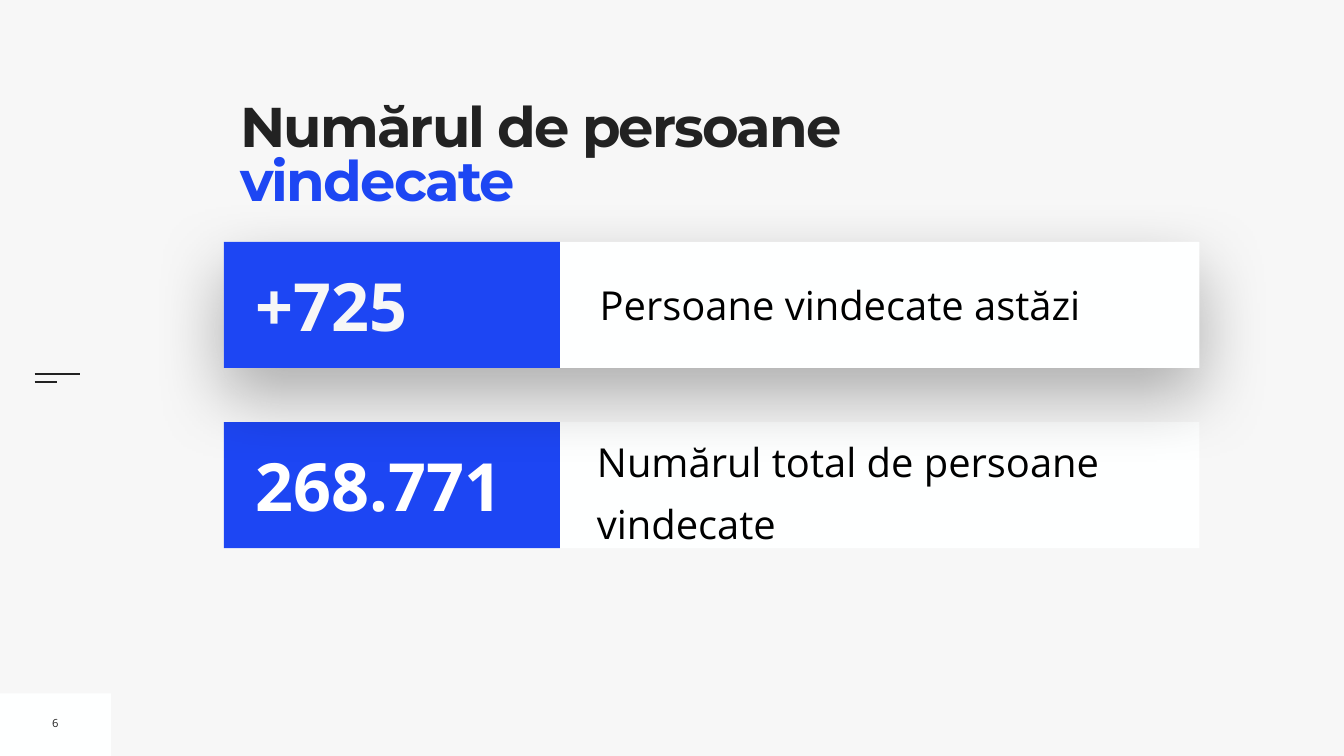
from dataclasses import dataclass

from lxml import etree
from pptx import Presentation
from pptx.dml.color import RGBColor
from pptx.enum.shapes import MSO_CONNECTOR, MSO_SHAPE
from pptx.enum.text import MSO_ANCHOR, MSO_AUTO_SIZE, PP_ALIGN
from pptx.oxml.ns import qn
from pptx.util import Inches, Pt

RECTANGLE = MSO_SHAPE.RECTANGLE
STRAIGHT = MSO_CONNECTOR.STRAIGHT
TOP, MIDDLE = MSO_ANCHOR.TOP, MSO_ANCHOR.MIDDLE
LEFT, CENTER = PP_ALIGN.LEFT, PP_ALIGN.CENTER
NO_AUTOFIT = MSO_AUTO_SIZE.NONE

WIDTH, HEIGHT = Inches(26.67), Inches(15)
GRID = 60  # columns across and rows down the slide
PAPER, WHITE, INK, BLUE, BLACK = "F7F7F7", "FEFFFF", "222222", "1D46F3", "000000"
BODY_FONT, TITLE_FONT = "Open Sans", "Montserrat"

# Card layout, in grid columns and rows
CARD_LEFT, CARD_WIDTH, CARD_HEIGHT = 10, 43.55, 10
NUMBER_WIDTH, NUMBER_INDENT = 15, 1.2


@dataclass
class Card:
    top: float
    number: str
    number_color: str
    label: str
    label_left: float
    label_inset: float = 0.1
    line_spacing: float = 1.0
    space_before: float = 0
    shadow: bool = False


CARDS = [
    Card(33.5, "268.771", "FFFFFF", "Numărul total de persoane vindecate", 26.65,
         label_inset=0, line_spacing=1.3, space_before=20),
    Card(19.2, "+725", PAPER, "Persoane vindecate astăzi", 26.55, shadow=True),
]


def color(value: str) -> RGBColor:
    return RGBColor.from_string(value)


def x(columns: float) -> int:
    return round(WIDTH * columns / GRID)


def y(rows: float) -> int:
    return round(HEIGHT * rows / GRID)


def box(left: float, top: float, width: float, height: float) -> tuple:
    return x(left), y(top), x(width), y(height)


def add_panel(shapes, area: tuple, fill: str):
    shape = shapes.add_shape(RECTANGLE, *area)
    shape.fill.solid()
    shape.fill.fore_color.rgb = color(fill)
    shape.line.fill.background()
    shape.shadow.inherit = False
    return shape


def set_frame(frame, inset: float, anchor, wrap: bool = True) -> None:
    frame.margin_left = frame.margin_right = Inches(inset)
    frame.margin_top = frame.margin_bottom = Inches(inset)
    frame.vertical_anchor, frame.word_wrap = anchor, wrap
    frame.auto_size = NO_AUTOFIT


def add_text(shapes, area: tuple, text: str, size: float, ink: str, bold: bool = False,
             inset: float = 0.1, align=LEFT, wrap: bool = True):
    frame = shapes.add_textbox(*area).text_frame
    set_frame(frame, inset, MIDDLE, wrap)
    paragraph = frame.paragraphs[0]
    paragraph.text, paragraph.alignment = text, align
    font = paragraph.font
    font.name, font.size, font.bold = BODY_FONT, Pt(size), bold
    font.color.rgb = color(ink)
    return paragraph


def add_shadow(shape) -> None:
    effects = shape._element.spPr.find(qn("a:effectLst"))
    shadow = etree.SubElement(effects, qn("a:outerShdw"), blurRad=str(Pt(100)),
                              dist=str(Pt(40)), dir="5400000", rotWithShape="0")
    tint = etree.SubElement(shadow, qn("a:srgbClr"), val=BLACK)
    etree.SubElement(tint, qn("a:alpha"), val="30000")


def add_card(slide, card: Card) -> None:
    shapes = slide.shapes.add_group_shape().shapes
    panel = add_panel(shapes, box(CARD_LEFT, card.top, CARD_WIDTH, CARD_HEIGHT), WHITE)
    if card.shadow:
        add_shadow(panel)
    label_width = CARD_LEFT + CARD_WIDTH - card.label_left
    label = add_text(shapes, box(card.label_left, card.top, label_width, CARD_HEIGHT),
                     card.label, 57, BLACK, inset=card.label_inset)
    label.line_spacing, label.space_before = card.line_spacing, Pt(card.space_before)
    add_panel(shapes, box(CARD_LEFT, card.top, NUMBER_WIDTH, CARD_HEIGHT), BLUE)
    number_area = box(CARD_LEFT + NUMBER_INDENT, card.top,
                      NUMBER_WIDTH - NUMBER_INDENT, CARD_HEIGHT)
    add_text(shapes, number_area, card.number, 95, card.number_color, bold=True)


def add_rule(slide, row: float, length: float) -> None:
    start = 1.55
    rule = slide.shapes.add_connector(STRAIGHT, x(start), y(row), x(start + length), y(row))
    rule.line.color.rgb, rule.line.width = color(INK), Pt(3)
    etree.SubElement(rule._element.spPr, qn("a:effectLst"))


def set_title(slide) -> None:
    title = slide.shapes.title
    title.left, title.top, title.width, title.height = box(10.73, 8.28, 29.27, 10.92)
    set_frame(title.text_frame, 0, TOP)
    paragraph = title.text_frame.paragraphs[0]
    paragraph.alignment, paragraph.line_spacing = LEFT, 0.8
    font = paragraph.font
    font.name, font.size, font.bold = TITLE_FONT, Pt(80), True
    for text, ink in (("Numărul de persoane ", INK), ("vindecate", BLUE)):
        run = paragraph.add_run()
        run.text = text
        run.font.color.rgb = color(ink)
        run._r.get_or_add_rPr().set("spc", "-270")


def main() -> None:
    presentation = Presentation()
    presentation.slide_width, presentation.slide_height = WIDTH, HEIGHT
    slide = presentation.slides.add_slide(presentation.slide_layouts.get_by_name("Title Only"))
    slide.background.fill.solid()
    slide.background.fill.fore_color.rgb = color(PAPER)

    # Page corner and margin mark
    add_panel(slide.shapes, box(0, 55.04, 4.95, 4.96), WHITE)
    add_rule(slide, 29.65, 2)
    add_rule(slide, 30.35, 1)

    # Title, page number and figures
    set_title(slide)
    add_text(slide.shapes, box(2.09, 56.36, 0.76, 2.04), "6", 16, INK,
             align=CENTER, wrap=False)
    for card in CARDS:
        add_card(slide, card)

    presentation.save("out.pptx")


if __name__ == "__main__":
    main()
